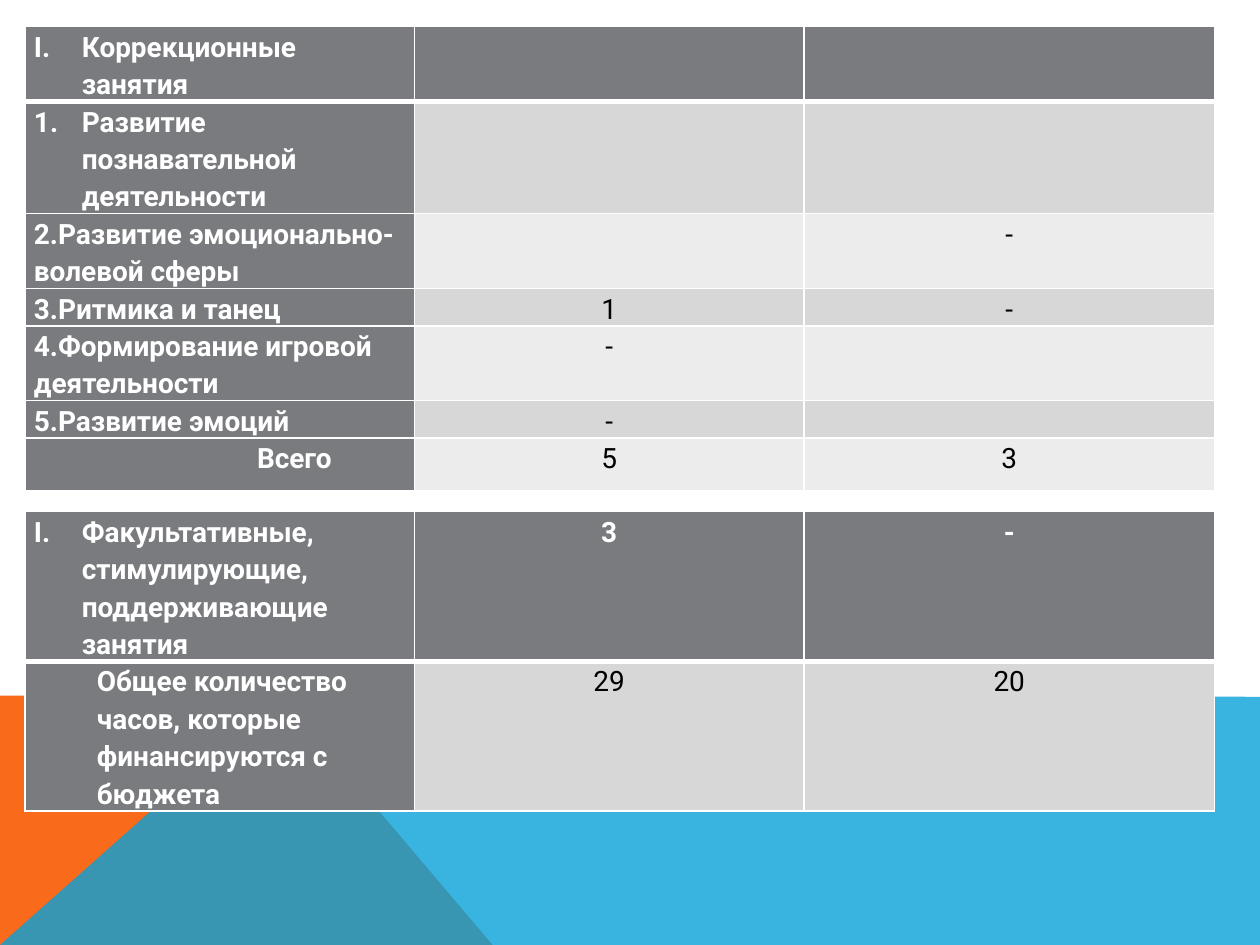
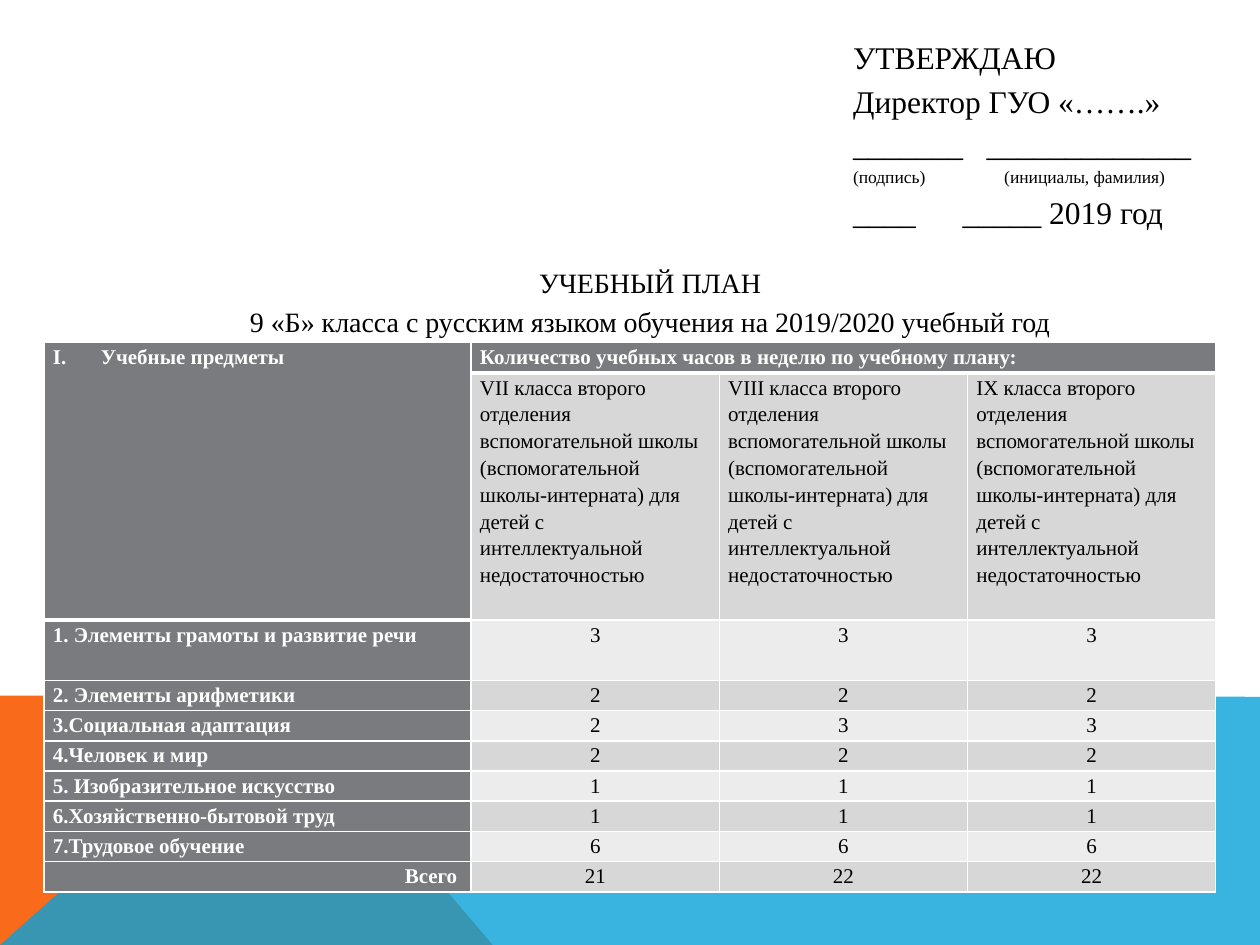
from dataclasses import dataclass

import pptx
import pptx.dml.color
import pptx.enum.text
import pptx.oxml.ns
import pptx.presentation
import pptx.shapes.autoshape
import pptx.slide
import pptx.table
import pptx.text.text
import pptx.util
from lxml import etree
from pptx.util import Inches

COLORS = {
    "white": "FFFFFF",
    "black": "000000",
    "header": "797B7E",
    "odd row": "D7D7D8",
    "even row": "ECECEC",
    "orange": "F96A1B",
    "blue": "08A1D9",
}
SERIF = "Times New Roman"
SANS = "Roboto"
LINE_SPACING = 1.15
HANGING = 0.38
ALIGN = pptx.enum.text.PP_ALIGN
qn = pptx.oxml.ns.qn


@dataclass
class Label:
    """A cell text with its own numbering, indent or alignment."""
    text: str
    numbering: str = ""
    indent: float = 0
    align: ALIGN = ALIGN.LEFT


@dataclass
class Grid:
    left: float
    top: float
    widths: list[float]
    heights: list[float]
    rows: list[list[str | Label]]
    font: str
    size: int
    left_aligned_rows: int = 0


@dataclass
class Band:
    color: str
    points: list[tuple[float, float]]
    opacity: int = 100


BANDS = [
    Band("orange", [(0, 7.5), (0, 5.52), (2.23, 5.52), (3.91, 7.5)]),
    Band("blue", [(0, 7.5), (2.23, 5.52), (10, 5.53), (10, 7.5)], opacity=80),
]

HOURS_WIDTHS = [3.09, 3.09, 3.26]
CORRECTION = Grid(
    0.2, 0.21, HOURS_WIDTHS, [0.5, 0.6, 0.55, 0.26, 0.5, 0.26, 0.42],
    [
        [Label("Коррекционные занятия", "romanUcPeriod", HANGING), "", ""],
        [Label("Развитие познавательной деятельности", "arabicPeriod", HANGING), "", ""],
        ["2.Развитие эмоционально-волевой сферы", "", "-"],
        ["3.Ритмика и танец", "1", "-"],
        ["4.Формирование игровой деятельности", "-", ""],
        ["5.Развитие эмоций", "-", ""],
        [Label("Всего", indent=1.77), "5", "3"],
    ],
    SANS, 16,
)
OPTIONAL = Grid(
    0.2, 4.06, HOURS_WIDTHS, [1.18, 1.02],
    [
        [Label("Факультативные, стимулирующие, поддерживающие занятия",
               "romanUcPeriod", HANGING), "3", "-"],
        [Label("Общее количество часов, которые финансируются с бюджета", indent=0.5),
         "29", "20"],
    ],
    SANS, 16,
)
GRADES = [
    f"{grade} класса второго отделения вспомогательной школы (вспомогательной "
    "школы-интерната) для детей с интеллектуальной недостаточностью"
    for grade in ("VII", "VIII", "IX")
]
PLAN = Grid(
    0.35, 2.72, [3.39] + [1.97] * 3, [0.24, 1.96, 0.48] + [0.24] * 7,
    [
        [Label("Учебные предметы", "romanUcPeriod", HANGING),
         "Количество учебных часов в неделю по учебному плану:", "", ""],
        ["", *GRADES],
        ["1. Элементы грамоты и развитие речи", "3", "3", "3"],
        ["2. Элементы арифметики", "2", "2", "2"],
        ["3.Социальная адаптация", "2", "3", "3"],
        ["4.Человек и мир", "2", "2", "2"],
        ["5. Изобразительное искусство", "1", "1", "1"],
        ["6.Хозяйственно-бытовой труд", "1", "1", "1"],
        ["7.Трудовое обучение", "6", "6", "6"],
        [Label("Всего ", align=ALIGN.RIGHT), "21", "22", "22"],
    ],
    SERIF, 12, left_aligned_rows=2,
)

# Text, size and tab stop of each line of the approval block
APPROVAL = [
    ("УТВЕРЖДАЮ", 18, 0),
    ("Директор ГУО «…….»", 18, 0),
    ("_______\t_____________", 18, 1.06),
    ("(подпись)\t(инициалы, фамилия)", 10, 1.2),
    ("____\t_____ 2019 год", 18, 0.87),
]
PLAN_TITLE = [
    "УЧЕБНЫЙ ПЛАН",
    "9 «Б» класса с русским языком обучения на 2019/2020 учебный год",
]


def rgb(name: str) -> pptx.dml.color.RGBColor:
    return pptx.dml.color.RGBColor.from_string(COLORS[name])


def format_paragraph(para: pptx.text.text._Paragraph, font: str, size: int,
                     color: str = "black", bold: bool = False,
                     align: ALIGN = ALIGN.LEFT) -> None:
    para.alignment = align
    para.line_spacing = LINE_SPACING
    para.font.name = font
    para.font.size = pptx.util.Pt(size)
    para.font.bold = bold
    para.font.color.rgb = rgb(color)


def indent_label(para: pptx.text.text._Paragraph, label: Label) -> None:
    properties = para._p.get_or_add_pPr()
    properties.set("marL", str(Inches(label.indent)))
    if label.numbering:
        properties.set("indent", str(-Inches(label.indent)))
        etree.SubElement(properties, qn("a:buFont"), typeface="+mj-lt")
        etree.SubElement(properties, qn("a:buAutoNum"), type=label.numbering)


def add_tab_stop(para: pptx.text.text._Paragraph, position: float) -> None:
    tabs = etree.SubElement(para._p.get_or_add_pPr(), qn("a:tabLst"))
    etree.SubElement(tabs, qn("a:tab"), pos=str(Inches(position)), algn="l")


def set_borders(cell: pptx.table._Cell, bottom: int) -> None:
    properties = cell._tc.get_or_add_tcPr()
    for side, width in {"lnL": 1, "lnR": 1, "lnT": 1, "lnB": bottom}.items():
        line = etree.SubElement(properties, qn(f"a:{side}"), w=str(pptx.util.Pt(width)))
        fill = etree.SubElement(line, qn("a:solidFill"))
        etree.SubElement(fill, qn("a:srgbClr"), val=COLORS["white"])


def fill_cell(cell: pptx.table._Cell, grid: Grid, row: int, column: int) -> None:
    content = grid.rows[row][column]
    centred = column > 0 and row >= grid.left_aligned_rows
    label = content if isinstance(content, Label) else Label(
        content, align=ALIGN.CENTER if centred else ALIGN.LEFT)
    is_header = row == 0 or column == 0
    heads_table = row == 0 or (column == 0 and row < grid.left_aligned_rows)

    cell.margin_left = cell.margin_right = Inches(0.07)
    cell.margin_top = cell.margin_bottom = 0
    set_borders(cell, bottom=3 if heads_table else 1)
    cell.fill.solid()
    cell.fill.fore_color.rgb = rgb(
        "header" if is_header else "odd row" if row % 2 else "even row")

    para = cell.text_frame.paragraphs[0]
    para.text = label.text
    indent_label(para, label)
    format_paragraph(para, grid.font, grid.size, "white" if is_header else "black",
                     is_header, label.align)


def add_grid(page: pptx.slide.Slide, grid: Grid) -> pptx.table.Table:
    frame = page.shapes.add_table(
        len(grid.heights), len(grid.widths), Inches(grid.left), Inches(grid.top),
        Inches(sum(grid.widths)), Inches(sum(grid.heights)))
    table = frame.table
    table.first_row = table.horz_banding = False
    for column, width in zip(table.columns, grid.widths):
        column.width = Inches(width)
    for row, height in zip(table.rows, grid.heights):
        row.height = Inches(height)
    for row in range(len(grid.heights)):
        for column in range(len(grid.widths)):
            fill_cell(table.cell(row, column), grid, row, column)
    return table


def draw_band(page: pptx.slide.Slide, band: Band) -> pptx.shapes.autoshape.Shape:
    start, *corners = [(Inches(x), Inches(y)) for x, y in band.points]
    builder = page.shapes.build_freeform(*start)
    builder.add_line_segments(corners, close=True)
    shape = builder.convert_to_shape()
    shape.shadow.inherit = False
    shape.line.fill.background()
    shape.fill.solid()
    shape.fill.fore_color.rgb = rgb(band.color)
    if band.opacity < 100:
        color = shape.element.spPr.find(f".//{qn('a:srgbClr')}")
        etree.SubElement(color, qn("a:alpha"), val=str(band.opacity * 1000))
    return shape


def add_bands_to_master(deck: pptx.presentation.Presentation,
                        page: pptx.slide.Slide) -> None:
    """Draw the bands on a page and move them to the master, which all pages share."""
    for number, band in enumerate(BANDS):
        element = draw_band(page, band).element
        element.nvSpPr.cNvPr.set("id", str(100 + number))
        deck.slide_master.shapes.element.append(element)


def add_approval(page: pptx.slide.Slide) -> None:
    box = page.shapes.add_textbox(Inches(2.64), Inches(0.21), Inches(7.15), Inches(2.04))
    frame = box.text_frame
    frame.word_wrap = True
    frame.margin_left = Inches(4.13)
    for number, (text, size, tab) in enumerate(APPROVAL):
        para = frame.add_paragraph() if number else frame.paragraphs[0]
        para.text = text
        if tab:
            add_tab_stop(para, tab)
        format_paragraph(para, SERIF, size)


def set_plan_title(page: pptx.slide.Slide) -> None:
    title = page.shapes.title
    title.left, title.top = Inches(0.75), Inches(2.02)
    title.width, title.height = Inches(8.82), Inches(0.7)
    frame = title.text_frame
    frame.auto_size = pptx.enum.text.MSO_AUTO_SIZE.NONE
    frame.vertical_anchor = pptx.enum.text.MSO_ANCHOR.TOP
    frame.text = "\n".join(PLAN_TITLE)
    for para in frame.paragraphs:
        format_paragraph(para, SERIF, 16, align=ALIGN.CENTER)


def main() -> None:
    deck = pptx.Presentation()
    deck.slide_width, deck.slide_height = Inches(10), Inches(7.5)
    title_only, blank = deck.slide_layouts[5], deck.slide_layouts[6]

    hours_page = deck.slides.add_slide(blank)
    add_bands_to_master(deck, hours_page)
    add_grid(hours_page, CORRECTION)
    add_grid(hours_page, OPTIONAL)

    plan_page = deck.slides.add_slide(title_only)
    add_approval(plan_page)
    set_plan_title(plan_page)
    table = add_grid(plan_page, PLAN)
    table.cell(0, 0).merge(table.cell(1, 0))
    table.cell(0, 1).merge(table.cell(0, 3))

    deck.save("out.pptx")


if __name__ == "__main__":
    main()
